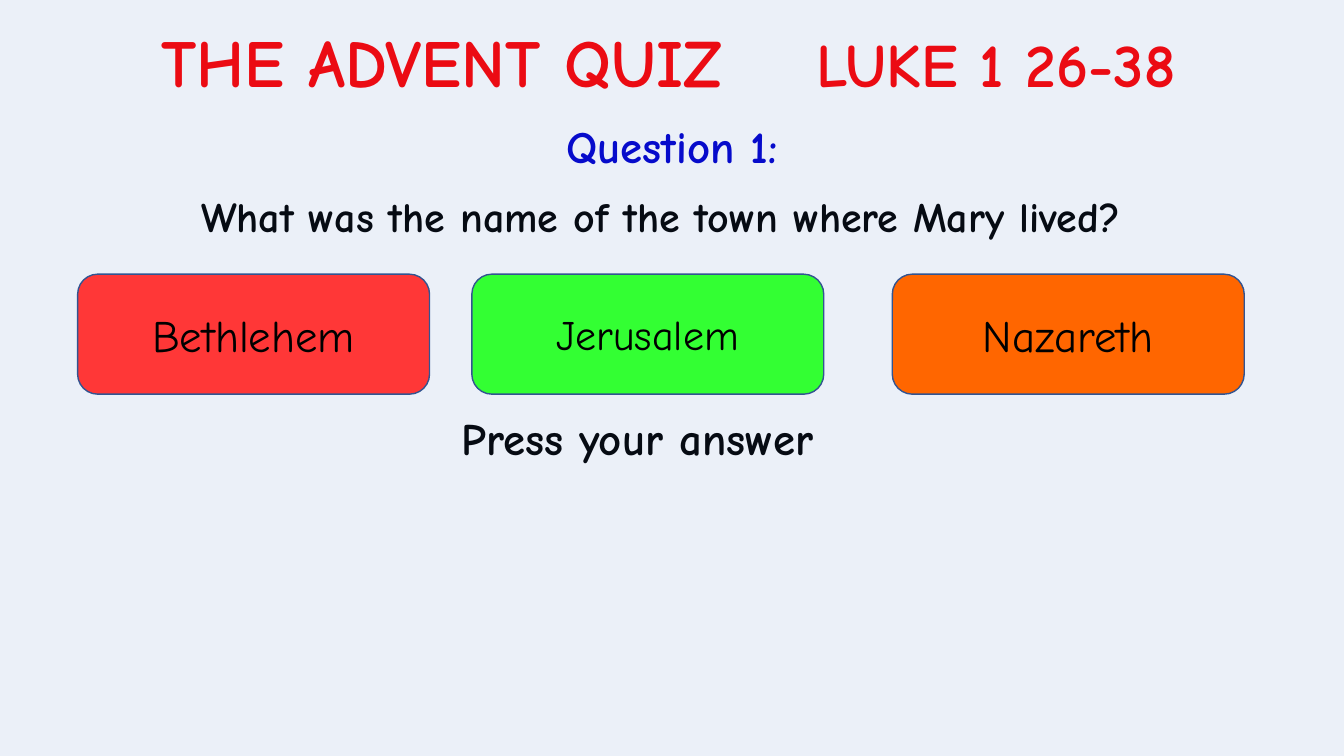
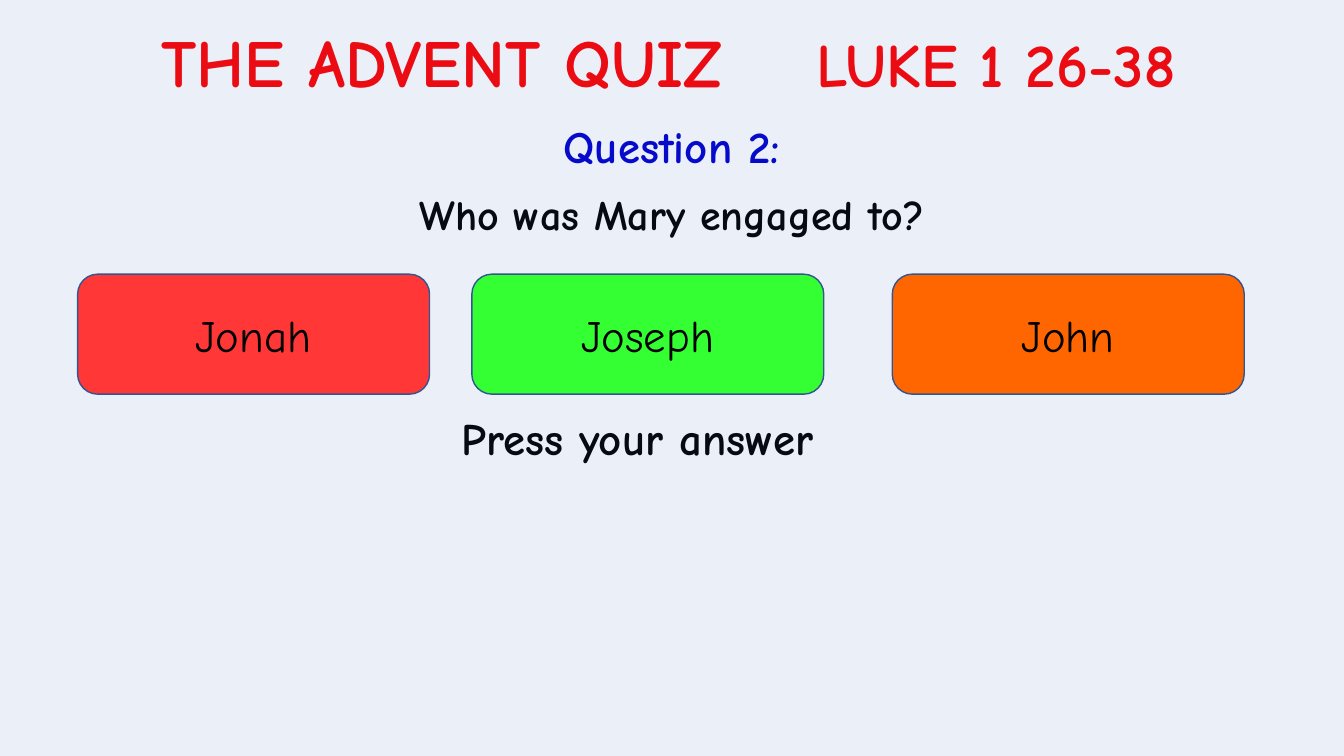
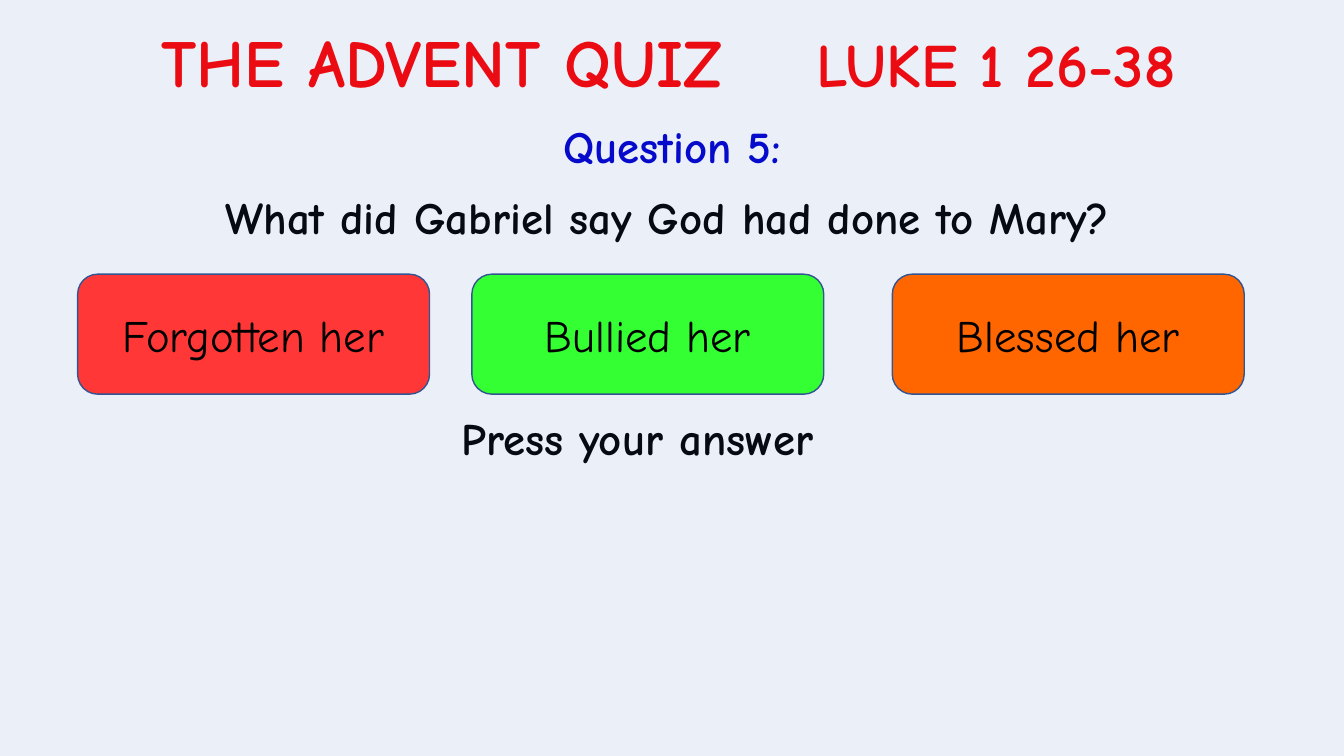
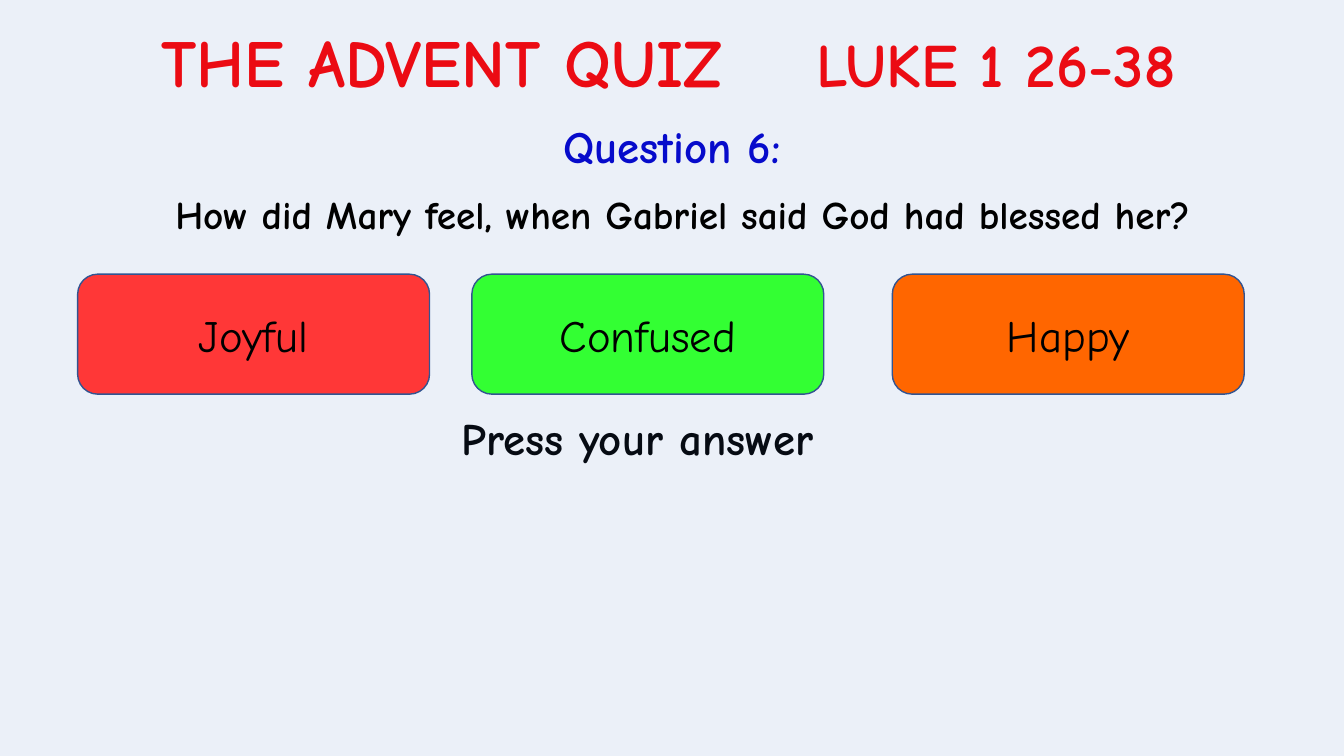
from lxml.etree import SubElement
from pptx import Presentation
from pptx.dml.color import RGBColor
from pptx.enum.shapes import MSO_SHAPE as Shape
from pptx.enum.text import MSO_ANCHOR as Anchor, PP_ALIGN as Align
from pptx.oxml.ns import qn
from pptx.util import Inches, Pt

FONT = "Comic Neue"
COLORS = {
    "title": "FF0000",
    "number": "0000CC",
    "text": "000000",
    "tint": "4472C4",
    "outline": "325491",
    "answers": ["FF3737", "33FF33", "FF6600"],
}
ANSWER_LEFTS = [0.77, 4.68, 8.85]

QUESTIONS = [
    {"number": 1, "text": "What was the name of the town where Mary lived?",
     "at": (0.77, 1.92, 11.57, 1.19), "size": 30, "line": 30,
     "answers": [("Bethlehem", 32), ("Jerusalem", 30), ("Nazareth", 32)]},
    {"number": 2, "text": "Who was Mary engaged to?",
     "at": (2.9, 1.77, 7.53, 1.19), "size": 30, "line": 40,
     "answers": [("Jonah", 32), ("Joseph", 32), ("John", 32)]},
    {"number": 5, "text": "What did Gabriel say God had done to Mary?",
     "at": (0.84, 1.95, 11.57, 1.19), "size": 32, "line": 30,
     "answers": [("Forgotten her", 32), ("Bullied her", 32), ("Blessed her", 32)]},
    {"number": 6, "text": "How did Mary feel, when Gabriel said God had blessed her?",
     "at": (0.77, 1.81, 12, 1.19), "size": 28, "line": 36, "above_tint": True,
     "answers": [("Joyful", 32), ("Confused", 32), ("Happy", 32)]},
]


def write(box, *parts, color="text", bold=True, align=Align.CENTER, line=None, before=None):
    """Fill the box with one paragraph made of (text, size) parts."""
    box.text_frame.word_wrap = True
    para = box.text_frame.paragraphs[0]
    para.alignment = align
    para.line_spacing = line
    para.space_before = before
    for text, size in parts:
        span = para.add_run()
        span.text = text
        span.font.name = FONT
        span.font.size = Pt(size)
        span.font.bold = bold
        span.font.color.rgb = RGBColor.from_string(COLORS[color])
    return para


def add_filled(page, kind, at, fill):
    shape = page.shapes.add_shape(kind, *map(Inches, at))
    shape.shadow.inherit = False
    shape.fill.solid()
    shape.fill.fore_color.rgb = RGBColor.from_string(fill)
    shape.line.color.rgb = RGBColor.from_string(COLORS["outline"])
    shape.line.width = Pt(1)
    return shape


deck = Presentation()
deck.slide_width = Inches(13.33)
deck.slide_height = Inches(7.5)

for question in QUESTIONS:
    page = deck.slides.add_slide(deck.slide_layouts[6])

    # Title, with a tab stop between its two parts
    box = page.shapes.add_textbox(*map(Inches, (1.5, 0.15, 10.5, 0.91)))
    para = write(box, ("THE ADVENT QUIZ\t", 48), ("LUKE 1 26-38", 44),
                 color="title", align=Align.LEFT)
    tabs = SubElement(para._p.get_or_add_pPr(), qn("a:tabLst"))
    SubElement(tabs, qn("a:tab"), pos=str(Inches(6.5)), algn="l")

    box = page.shapes.add_textbox(*map(Inches, (4.46, 1.13, 4.41, 0.64)))
    write(box, (f"Question {question['number']}:", 32), color="number")

    box = page.shapes.add_textbox(*map(Inches, (4.48, 4.09, 6.73, 0.72)))
    write(box, ("Press your answer", 32), align=Align.LEFT, line=0.9, before=Pt(7.5))

    question_box = page.shapes.add_textbox(*map(Inches, question["at"]))
    write(question_box, (question["text"], question["size"]),
          line=Pt(question["line"]), before=Pt(10))

    # Translucent wash over the whole page
    tint = add_filled(page, Shape.RECTANGLE, (0, 0, 13.33, 7.5), COLORS["tint"])
    tint.line.fill.background()
    tint_color = tint.fill._xPr.find(f".//{qn('a:srgbClr')}")
    SubElement(tint_color, qn("a:alpha"), val="10000")
    if question.get("above_tint"):
        tint._element.addnext(question_box._element)

    for left, fill, answer in zip(ANSWER_LEFTS, COLORS["answers"], question["answers"]):
        button = add_filled(page, Shape.ROUNDED_RECTANGLE, (left, 2.72, 3.49, 1.19), fill)
        button.text_frame.vertical_anchor = Anchor.MIDDLE
        write(button, answer, bold=False)

deck.save("out.pptx")
